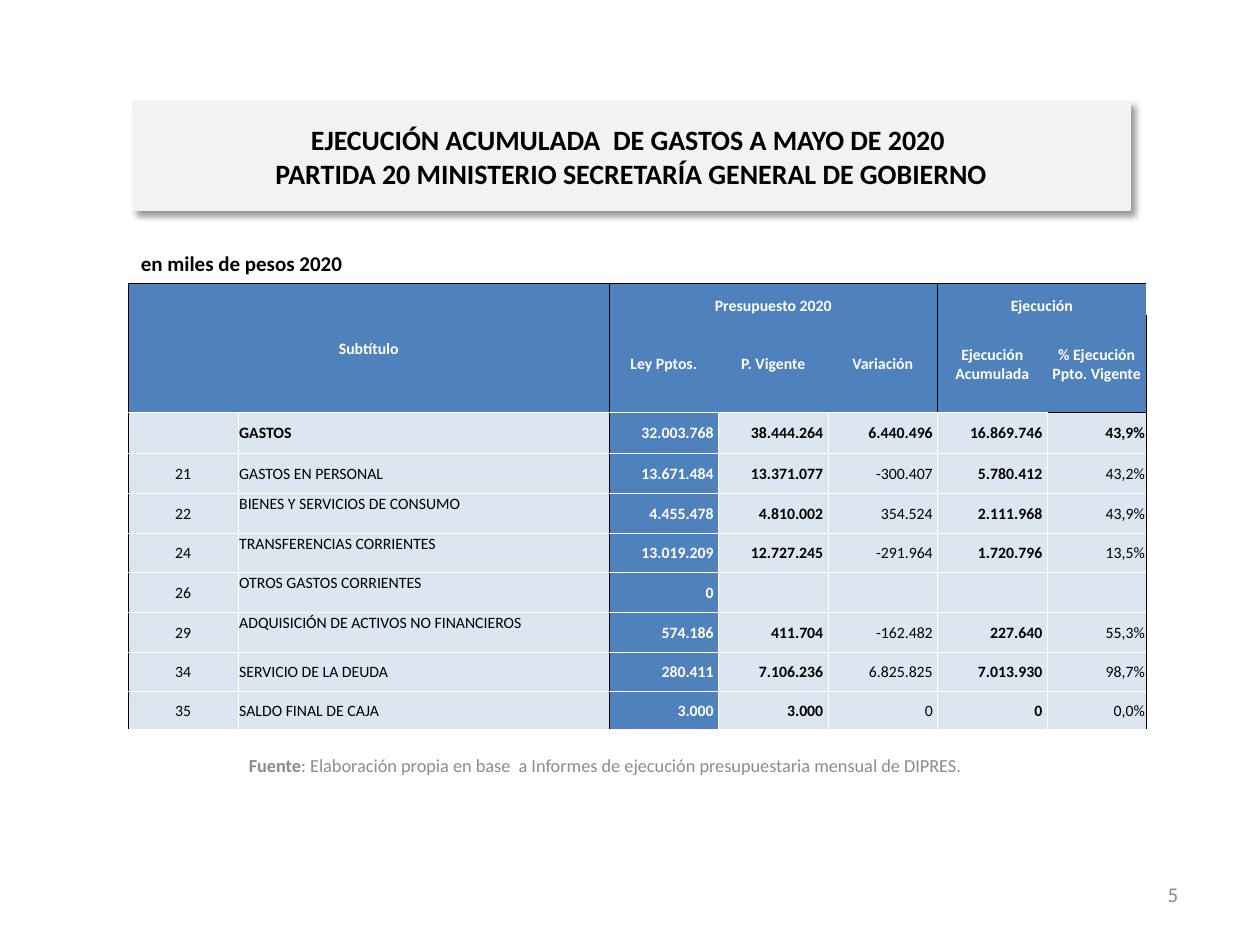
"""Build the slide on accumulated budget spending to May 2020."""
from lxml.etree import SubElement
from pptx import Presentation
from pptx.dml.color import RGBColor
from pptx.enum.shapes import MSO_SHAPE
from pptx.enum.text import MSO_ANCHOR as ANCHOR, PP_ALIGN as ALIGN
from pptx.oxml.ns import qn
from pptx.util import Pt

BLUE, PALE, WHITE, BLACK, GRAY = "4F81BD", "DCE6F1", "FFFFFF", "000000", "8C8C8C"
COL_WIDTHS = [62.6, 212, 62.6, 62.6, 62.6, 62.6, 56.6]
ROW_HEIGHTS = [18, 55.5, 23.5] + [22.7] * 6 + [21.5]
LAST_ROW, LAST_COL = len(ROW_HEIGHTS) - 1, len(COL_WIDTHS) - 1
GROUPS = [(0, 0, 1, 1, "Subtítulo"), (0, 2, 0, 4, "Presupuesto 2020"), (0, 5, 0, 6, "Ejecución")]
HEADINGS = ["Ley Pptos.", "P. Vigente", "Variación", "Ejecución Acumulada",
            "% Ejecución Ppto. Vigente"]
ROWS = [
    ["", "GASTOS", "32.003.768", "38.444.264", "6.440.496", "16.869.746", "43,9%"],
    ["21", "GASTOS EN PERSONAL", "13.671.484", "13.371.077", "-300.407", "5.780.412", "43,2%"],
    ["22", "BIENES Y SERVICIOS DE CONSUMO", "4.455.478", "4.810.002", "354.524", "2.111.968", "43,9%"],
    ["24", "TRANSFERENCIAS CORRIENTES", "13.019.209", "12.727.245", "-291.964", "1.720.796", "13,5%"],
    ["26", "OTROS GASTOS CORRIENTES", "0", "", "", "", ""],
    ["29", "ADQUISICIÓN DE ACTIVOS NO FINANCIEROS", "574.186", "411.704", "-162.482", "227.640", "55,3%"],
    ["34", "SERVICIO DE LA DEUDA", "280.411", "7.106.236", "6.825.825", "7.013.930", "98,7%"],
    ["35", "SALDO FINAL DE CAJA", "3.000", "3.000", "0", "0", "0,0%"],
]
TOP_LABELS = {"22", "24", "26", "29"}


def rgb(value):
    return RGBColor.from_string(value)


def header_edges(row, col):
    bottom = None if row == 0 else BLACK if col == LAST_COL else WHITE
    return {"L": BLACK if col in (0, 2, 5) else None,
            "R": BLACK if col in (1, 4, LAST_COL) else None,
            "T": BLACK if row == 0 else None, "B": bottom}


def body_edges(row, col):
    return {"L": BLACK if col in (0, 2) else WHITE,
            "R": BLACK if col in (1, LAST_COL) else WHITE,
            "T": BLACK if (row, col) == (2, LAST_COL) else WHITE,
            "B": None if row == LAST_ROW else WHITE}


class SlideBuilder:
    font = "Calibri"

    def __init__(self, slide):
        self.slide = slide

    def style(self, p, size, color, bold=False, align=ALIGN.LEFT):
        p.alignment = align
        for r in p.runs:
            r.font.name, r.font.size, r.font.bold = self.font, Pt(size), bold
            r.font.color.rgb = rgb(color)

    def banner(self, x, y, w, h, text, fill):
        sp = self.slide.shapes.add_shape(MSO_SHAPE.RECTANGLE, Pt(x), Pt(y), Pt(w), Pt(h))
        sp.fill.solid()
        sp.fill.fore_color.rgb = sp.line.color.rgb = rgb(fill)
        sp.line.width = Pt(0.75)
        sp.shadow.inherit = False
        effects = sp._element.spPr.find(qn("a:effectLst"))
        shadow = SubElement(effects, qn("a:outerShdw"), blurRad=str(Pt(4)), dist=str(Pt(3)),
                            dir="2700000", algn="tl", rotWithShape="0")
        color = SubElement(shadow, qn("a:srgbClr"), val=BLACK)
        SubElement(color, qn("a:alpha"), val="40000")
        tf = sp.text_frame
        tf.vertical_anchor = ANCHOR.MIDDLE
        tf.paragraphs[0].text = text
        self.style(tf.paragraphs[0], 16, BLACK, True, ALIGN.CENTER)

    def text(self, x, y, w, h, text, size, color, bold=False, align=ALIGN.LEFT,
             anchor=ANCHOR.MIDDLE):
        tf = self.slide.shapes.add_textbox(Pt(x), Pt(y), Pt(w), Pt(h)).text_frame
        tf.word_wrap, tf.vertical_anchor = True, anchor
        p = tf.paragraphs[0]
        p.text = text
        self.style(p, size, color, bold, align)
        return p

    def table(self, x, y, widths, heights):
        frame = self.slide.shapes.add_table(len(heights), len(widths), Pt(x), Pt(y),
                                            Pt(sum(widths)), Pt(sum(heights)))
        table = frame.table
        table.first_row = table.horz_banding = False
        for column, width in zip(table.columns, widths):
            column.width = Pt(width)
        for row, height in zip(table.rows, heights):
            row.height = Pt(height)
        return table

    def box(self, cell, fill, edges):
        tcPr = cell._tc.get_or_add_tcPr()
        for side, color in edges.items():
            ln = SubElement(tcPr, qn(f"a:ln{side}"), w=str(Pt(0.5)))
            if color:
                SubElement(SubElement(ln, qn("a:solidFill")), qn("a:srgbClr"), val=color)
            else:
                SubElement(ln, qn("a:noFill"))
        cell.fill.solid()
        cell.fill.fore_color.rgb = rgb(fill)
        cell.margin_left = cell.margin_right = cell.margin_top = Pt(0.72)
        cell.margin_bottom = 0

    def cell_text(self, cell, text, color, bold, align, anchor=ANCHOR.MIDDLE):
        cell.vertical_anchor = anchor
        p = cell.text_frame.paragraphs[0]
        p.text = text
        self.style(p, 9, color, bold, align)


def fill_header(builder, table):
    for row in range(2):
        for col in range(LAST_COL + 1):
            builder.box(table.cell(row, col), BLUE, header_edges(row, col))
    for top, left, bottom, right, text in GROUPS:
        cell = table.cell(top, left)
        cell.merge(table.cell(bottom, right))
        anchor = ANCHOR.BOTTOM if top == bottom else ANCHOR.MIDDLE
        builder.cell_text(cell, text, WHITE, True, ALIGN.CENTER, anchor)
    for col, text in enumerate(HEADINGS, 2):
        builder.cell_text(table.cell(1, col), text, WHITE, True, ALIGN.CENTER)


def fill_body(builder, table):
    aligns = [ALIGN.CENTER, ALIGN.JUSTIFY] + [ALIGN.RIGHT] * 5
    for row, values in enumerate(ROWS, 2):
        for col, text in enumerate(values):
            cell = table.cell(row, col)
            law = col == 2
            builder.box(cell, BLUE if law else PALE, body_edges(row, col))
            if 2 <= col < LAST_COL:
                cell.margin_right = Pt(2.75)
            raised = col == 1 and values[0] in TOP_LABELS
            builder.cell_text(cell, text, WHITE if law else BLACK, row == 2 or col in (2, 3, 5),
                              aligns[col], ANCHOR.TOP if raised else ANCHOR.MIDDLE)


def main():
    prs = Presentation()
    prs.slide_width, prs.slide_height = Pt(720), Pt(540)
    s = SlideBuilder(prs.slides.add_slide(prs.slide_layouts[6]))
    s.banner(75.6, 58.3, 570.2, 61.7, "EJECUCIÓN ACUMULADA  DE GASTOS A MAYO DE 2020 \v"
             "PARTIDA 20 MINISTERIO SECRETARÍA GENERAL DE GOBIERNO", "F2F2F2")
    source = s.text(62.6, 422.6, 566.6, 28.8, "Fuente", 10.5, GRAY, True, ALIGN.CENTER)
    r = source.add_run()
    r.text = ": Elaboración propia en base  a Informes de ejecución presupuestaria mensual de DIPRES."
    s.style(source, 10.5, GRAY, False, ALIGN.CENTER)
    source.runs[0].font.bold = True
    s.text(512.6, 496.8, 167.8, 28.8, "5", 12, GRAY, align=ALIGN.RIGHT)
    s.text(73.4, 139.7, 570.2, 22.3, "en miles de pesos 2020", 12, BLACK, True, anchor=ANCHOR.TOP)
    table = s.table(73.4, 162.2, COL_WIDTHS, ROW_HEIGHTS)
    fill_header(s, table)
    fill_body(s, table)
    prs.save("out.pptx")


if __name__ == "__main__":
    main()
